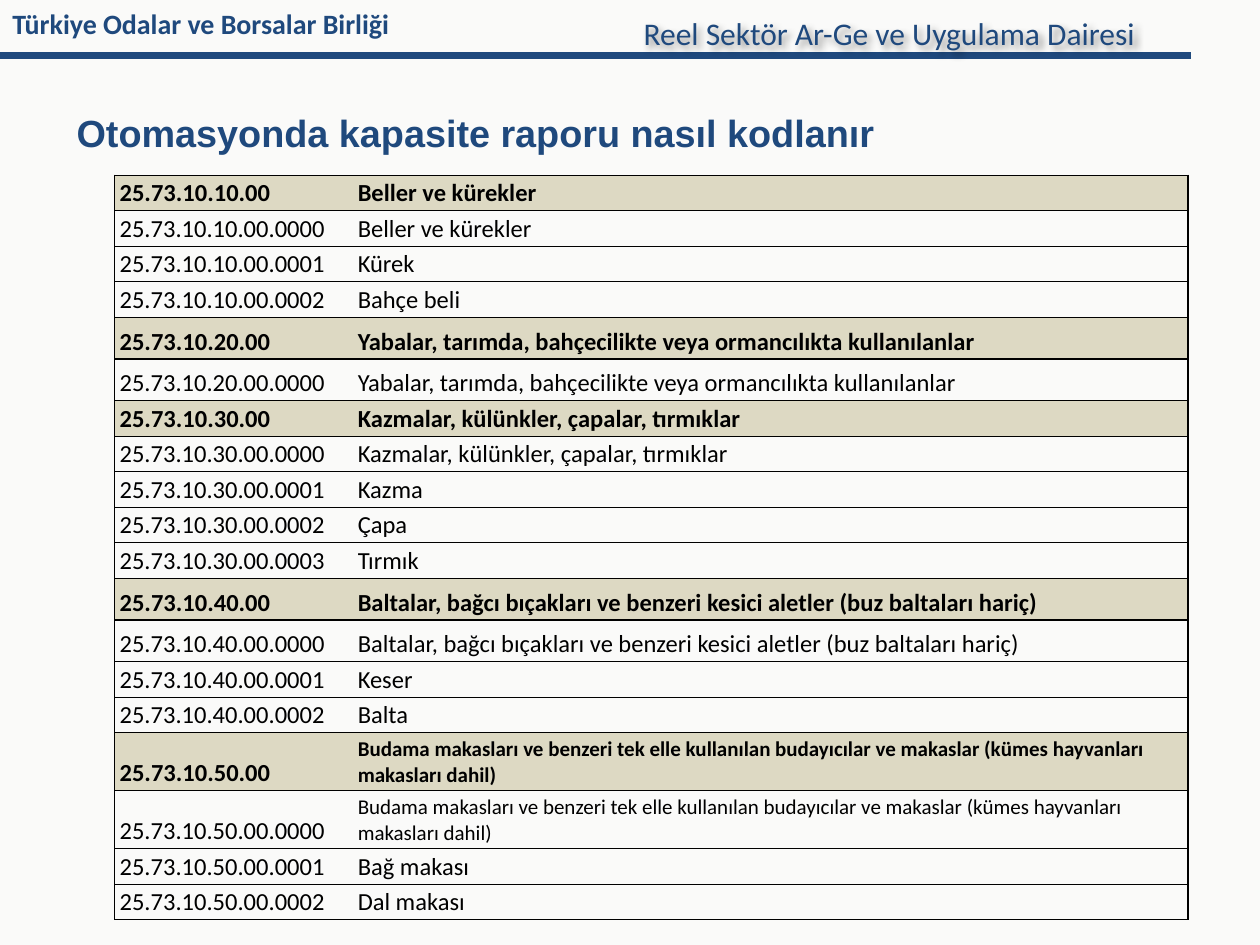
from lxml import etree
from pptx import Presentation
from pptx.dml.color import RGBColor
from pptx.enum import shapes, text
from pptx.oxml import parse_xml
from pptx.oxml.ns import nsdecls, qn
from pptx.util import Inches, Pt

NAVY, BLACK, SAND = "1F497D", "000000", "DDD9C3"


def rgb(value):
    return RGBColor.from_string(value)


def add_run(frame, words, size, font, color, bold=False):
    run = frame.paragraphs[0].add_run()
    run.text = words
    run.font.size = Pt(size)
    run.font.name = font
    run.font.bold = bold
    run.font.color.rgb = rgb(color)


prs = Presentation()
prs.slide_width, prs.slide_height = Inches(10), Inches(7.5)
slide = prs.slides.add_slide(prs.slide_layouts[6])
slide.background.fill.solid()
slide.background.fill.fore_color.rgb = rgb("FAFAF9")

# Header rule
rule = slide.shapes.add_connector(
    shapes.MSO_CONNECTOR.STRAIGHT, Inches(0), Inches(0.44), Inches(9.45), Inches(0.44))
rule.line.color.rgb = rgb(NAVY)
rule.line.width = Pt(4)
etree.SubElement(rule._element.spPr, qn("a:effectLst"))

# Headings
headings = [
    ("Türkiye Odalar ve Borsalar Birliği", 0, 0, 8.15, 0.37, 16, "Calibri", True),
    ("Otomasyonda kapasite raporu nasıl kodlanır", 0.51, 0.76, 9, 0.47, 21.6, "Arial", True),
    ("Reel Sektör Ar-Ge ve Uygulama Dairesi", 5.01, 0.06, 4.41, 0.4, 18, "Calibri", False),
]
for words, left, top, width, height, size, font, bold in headings:
    heading = slide.shapes.add_textbox(Inches(left), Inches(top), Inches(width), Inches(height))
    frame = heading.text_frame
    frame.word_wrap = True
    if font == "Arial":
        frame.vertical_anchor = text.MSO_ANCHOR.BOTTOM
        frame.margin_bottom = 0
    add_run(frame, words, size, font, NAVY, bold)

# Soft shadow behind the department name, the last heading
heading._element.spPr.append(parse_xml(
    f'<a:effectLst {nsdecls("a")}><a:outerShdw blurRad="50800" dist="38100" dir="2700000">'
    '<a:srgbClr val="000000"><a:alpha val="40000"/></a:srgbClr></a:outerShdw></a:effectLst>'))

# Product groups: code, name, row height (None = regular), name size, products
groups = [
    ("25.73.10.10.00", "Beller ve kürekler", None, 14, ["Kürek", "Bahçe beli"]),
    ("25.73.10.20.00", "Yabalar, tarımda, bahçecilikte veya ormancılıkta kullanılanlar",
     0.33, 14, []),
    ("25.73.10.30.00", "Kazmalar, külünkler, çapalar, tırmıklar", None, 14,
     ["Kazma", "Çapa", "Tırmık"]),
    ("25.73.10.40.00", "Baltalar, bağcı bıçakları ve benzeri kesici aletler (buz baltaları hariç)",
     0.33, 14, ["Keser", "Balta"]),
    ("25.73.10.50.00", "Budama makasları ve benzeri tek elle kullanılan budayıcılar ve makaslar "
     "(kümes hayvanları makasları dahil)", 0.46, 12, ["Bağ makası", "Dal makası"]),
]
rows = []
for code, name, height, size, products in groups:
    rows.append((code, name, height, size, True))
    rows.append((f"{code}.0000", name, height, size, False))
    for number, product in enumerate(products, 1):
        rows.append((f"{code}.{number:04d}", product, None, 14, False))

table_height = 5.91
tall = [row[2] for row in rows if row[2]]
regular = (table_height - sum(tall)) / (len(rows) - len(tall))

holder = slide.shapes.add_table(
    len(rows), 2, Inches(0.91), Inches(1.39), Inches(8.52), Inches(table_height))
codes = holder.table
codes.first_row = codes.horz_banding = False
# "No Style, No Grid"
codes._tbl.tblPr.find(qn("a:tableStyleId")).text = "{2D5ABB26-0587-4C30-8999-92F81FD0307C}"
codes.columns[0].width, codes.columns[1].width = Inches(1.89), Inches(6.63)

for r, (code, name, height, name_size, is_group) in enumerate(rows):
    codes.rows[r].height = Inches(height or regular)
    for c, (words, size) in enumerate([(code, 14), (name, name_size)]):
        cell = codes.cell(r, c)
        cell.vertical_anchor = text.MSO_ANCHOR.BOTTOM
        cell.margin_left = cell.margin_right = Inches(0.04)
        cell.margin_top = cell.margin_bottom = Inches(0.02)
        add_run(cell.text_frame, words, size, "Calibri", BLACK, is_group)
        outer = ("lnL", 0.75) if c == 0 else ("lnR", 1)
        for side, weight in [outer, ("lnT", 0.75), ("lnB", 0.75)]:
            cell._tc.get_or_add_tcPr().append(parse_xml(
                f'<a:{side} {nsdecls("a")} w="{Pt(weight)}"><a:solidFill>'
                f'<a:srgbClr val="{BLACK}"/></a:solidFill></a:{side}>'))
        if is_group:
            cell.fill.solid()
            cell.fill.fore_color.rgb = rgb(SAND)
        else:
            cell.fill.background()

prs.save("out.pptx")
